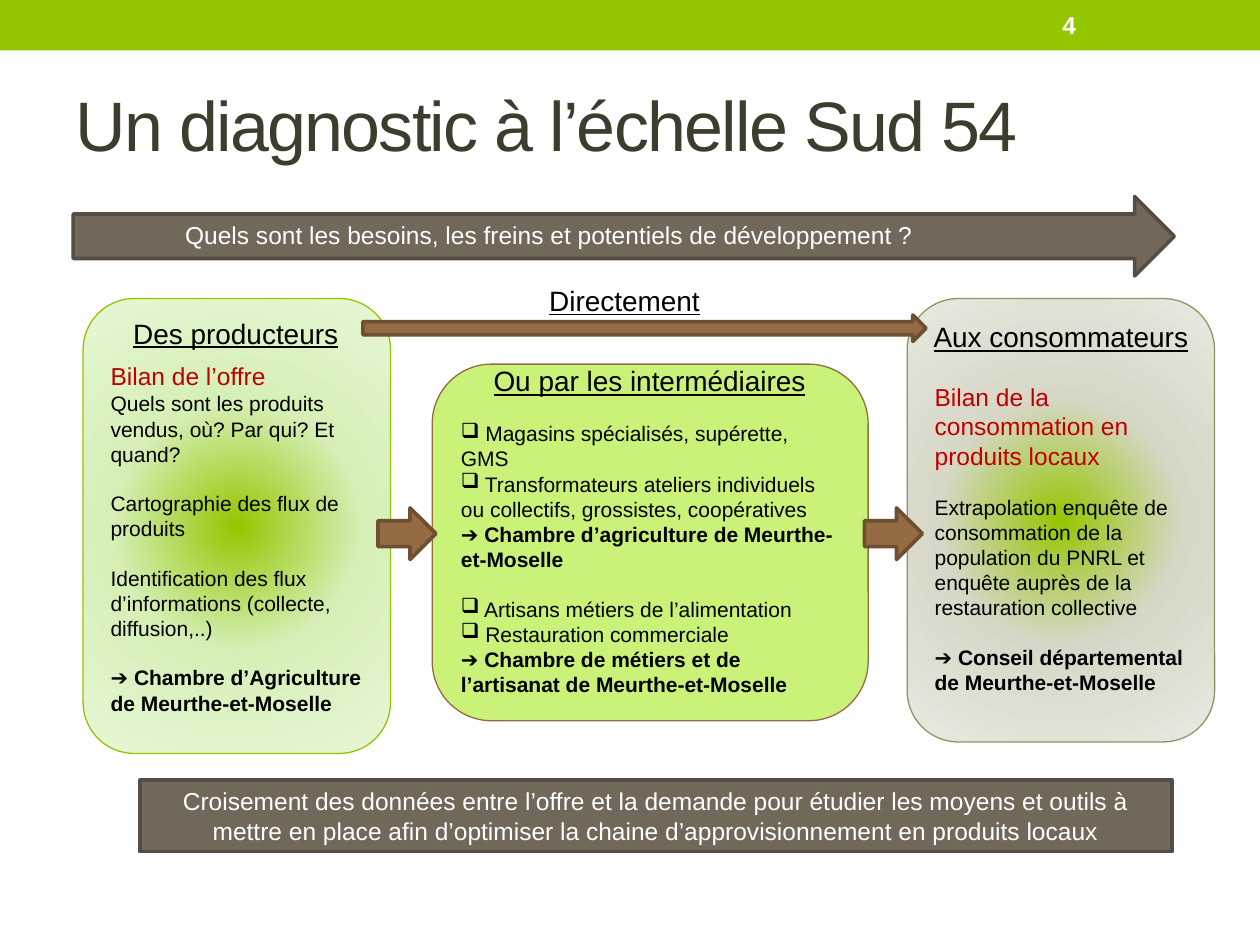
import dataclasses

import pptx
import pptx.dml.color
import pptx.enum.shapes
import pptx.enum.text
import pptx.oxml
import pptx.oxml.ns
import pptx.util

Pt = pptx.util.Pt
KIND = pptx.enum.shapes.MSO_SHAPE
ALIGN = pptx.enum.text.PP_ALIGN
ANCHOR = pptx.enum.text.MSO_ANCHOR


@dataclasses.dataclass(frozen=True)
class Theme:
    """Colours, type sizes and font of the slide."""
    font: str = "Arial"
    green: str = "94C600"
    lime: str = "CAF278"
    olive: str = "909465"
    brown: str = "956B43"
    bark: str = "6E4F32"
    stone: str = "71685A"
    slate: str = "544D43"
    red: str = "C00000"
    ink: str = "3E3D2D"
    black: str = "000000"
    white: str = "FFFFFF"
    fresh: tuple = ("94C600", "D5EFB6", "E8F7D7")
    sage: tuple = ("94C600", "D6D7C6", "E8E9E0")
    title: int = 40
    head: int = 16
    lead: int = 14
    body: int = 12
    gap: float = 13.8
    edge: float = 0.75
    thick: float = 2.08


T = Theme()


def rgb(code):
    """Return the colour for a hex code."""
    return pptx.dml.color.RGBColor.from_string(code)


def style(para, size, color, bold=False, under=False):
    """Format every run of a paragraph."""
    for run in para.runs:
        font = run.font
        font.name, font.size = T.font, Pt(size)
        font.bold, font.underline = bold, under
        font.color.rgb = rgb(color)


def glow(shape, stops):
    """Fill a shape with a round gradient, from the centre outwards."""
    marks = "".join(
        f'<a:gs pos="{pos}"><a:srgbClr val="{code}"/></a:gs>'
        for pos, code in zip((0, 45000, 100000), stops))
    shape.fill.gradient()
    props = shape._element.spPr
    old = props.find(pptx.oxml.ns.qn("a:gradFill"))
    props.replace(old, pptx.oxml.parse_xml(
        f'<a:gradFill {pptx.oxml.ns.nsdecls("a")} rotWithShape="1">'
        f'<a:gsLst>{marks}</a:gsLst><a:path path="circle">'
        '<a:fillToRect l="50000" t="50000" r="50000" b="50000"/>'
        '</a:path></a:gradFill>'))


def block(slide, kind, box, fill, line=None, width=T.thick):
    """Add a preset shape with a plain or glowing fill."""
    shape = slide.shapes.add_shape(kind, *map(Pt, box))
    shape.shadow.inherit = False
    if isinstance(fill, tuple):
        glow(shape, fill)
    else:
        shape.fill.solid()
        shape.fill.fore_color.rgb = rgb(fill)
    if line:
        shape.line.color.rgb = rgb(line)
        shape.line.width = Pt(width)
    else:
        shape.line.fill.background()
    return shape


def label(slide, box, text, size, color, align=ALIGN.LEFT, **look):
    """Add a text box of one paragraph."""
    frame = slide.shapes.add_textbox(*map(Pt, box)).text_frame
    frame.word_wrap = True
    frame.text = text
    frame.paragraphs[0].alignment = align
    style(frame.paragraphs[0], size, color, **look)
    return frame


def notes(slide, box, rows):
    """Add body text from rows of role, text and whether a gap comes first."""
    frame = slide.shapes.add_textbox(*map(Pt, box)).text_frame
    frame.word_wrap = True
    for i, (role, text, gap) in enumerate(rows):
        para = frame.paragraphs[0] if i == 0 else frame.add_paragraph()
        para.text = text
        lead = role == "lead"
        style(para, T.lead if lead else T.body, T.red if lead else T.black,
              bold=role == "bold")
        if gap:
            para.space_before = Pt(T.gap)
        if role == "item":
            para._p.get_or_add_pPr().append(pptx.oxml.parse_xml(
                f'<a:buChar {pptx.oxml.ns.nsdecls("a")} char="❑"/>'))


def card(slide, box, fill, line, name, head, rows, body, align=ALIGN.LEFT):
    """Add a rounded card; head and body are left, top and width within it."""
    x, y, _, high = box
    block(slide, KIND.ROUNDED_RECTANGLE, box, fill, line, T.edge)
    label(slide, (x + head[0], y + head[1], head[2], 26.6), name,
          T.head, T.black, align, under=True)
    notes(slide, (x + body[0], y + body[1], body[2], high - body[1]), rows)


def top(slide, box):
    """Add the green strip with the page number."""
    x, y, wide, high = box
    block(slide, KIND.RECTANGLE, box, T.green)
    frame = label(slide, (x + wide - 120, y + 1.4, 84, high - 2.9), "4",
                  T.lead, T.white, bold=True)
    frame.vertical_anchor = ANCHOR.MIDDLE


def title(slide, box, text):
    """Place and format the title."""
    shape = slide.shapes.title
    shape.left, shape.top, shape.width, shape.height = map(Pt, box)
    frame = shape.text_frame
    frame.text = text
    frame.auto_size = pptx.enum.text.MSO_AUTO_SIZE.NONE
    frame.vertical_anchor = ANCHOR.MIDDLE
    para = frame.paragraphs[0]
    para.alignment = ALIGN.LEFT
    style(para, T.title, T.ink)
    for run in para.runs:
        run.font._element.set("spc", "-100")


def banner(slide, box, text):
    """Add the wide arrow with its question."""
    x, y, wide, _ = box
    shape = block(slide, KIND.RIGHT_ARROW, box, T.stone, T.slate)
    shape.adjustments[0] = 0.56
    label(slide, (x + 56.9, y + 10.1, wide - 60, 24.5), text,
          T.lead, T.white)


def flow(slide, box):
    """Add the direct arrow with its label, and the two short arrows."""
    x, y, wide, _ = box
    label(slide, (x + 99.4, y, 113, 26.6), "Directement",
          T.head, T.black, under=True)
    arrows = [(x, y + 21.6, wide, 15.1)]
    arrows += [(x + dx, y + 131.8, 33.1, 29.5) for dx in (8.6, 286.6)]
    for spot in arrows:
        block(slide, KIND.RIGHT_ARROW, spot, T.brown, T.bark)


def foot(slide, box, text):
    """Add the closing statement."""
    frame = block(slide, KIND.RECTANGLE, box, T.stone, T.slate).text_frame
    frame.word_wrap = True
    frame.text = text
    frame.paragraphs[0].alignment = ALIGN.CENTER
    style(frame.paragraphs[0], T.lead, T.white)


OFFER = [
    ("lead", "Bilan de l’offre", False),
    ("text", "Quels sont les produits vendus, où? Par qui? Et quand?", False),
    ("text", "Cartographie des flux de produits", True),
    ("text", "Identification des flux d’informations (collecte, diffusion,..)", True),
    ("bold", "➔ Chambre d’Agriculture de Meurthe-et-Moselle", True),
]
TRADE = [
    ("item", " Magasins spécialisés, supérette, GMS", False),
    ("item", " Transformateurs ateliers individuels ou collectifs, grossistes, coopératives", False),
    ("bold", "➔ Chambre d’agriculture de Meurthe-et-Moselle", False),
    ("item", " Artisans métiers de l’alimentation", True),
    ("item", " Restauration commerciale", False),
    ("bold", "➔ Chambre de métiers et de l’artisanat de Meurthe-et-Moselle", False),
]
DEMAND = [
    ("lead", "Bilan de la consommation en produits locaux", False),
    ("text", "Extrapolation enquête de consommation de la population du PNRL et enquête auprès de la restauration collective", True),
    ("bold", "➔ Conseil départemental de Meurthe-et-Moselle", True),
]


def main():
    """Build the slide and save it."""
    deck = pptx.Presentation()
    deck.slide_width, deck.slide_height = Pt(720), Pt(540)
    slide = deck.slides.add_slide(deck.slide_layouts[5])
    top(slide, (0, 0, 720, 28.8))
    title(slide, (36, 31.7, 648, 77.8), "Un diagnostic à l’échelle Sud 54")
    banner(slide, (41.8, 112.3, 629.3, 45.4),
           "Quels sont les besoins, les freins et potentiels de développement ?")
    card(slide, (47.5, 170.6, 175.7, 260), T.fresh, T.green, "Des producteurs",
         (8, 6.5, 158.4), OFFER, (8.6, 32.4, 167), ALIGN.CENTER)
    card(slide, (247, 208.1, 249.1, 203.8), T.lime, T.brown,
         "Ou par les intermédiaires", (28, -3.6, 211.7), TRADE, (9.3, 28.8, 230.4))
    card(slide, (518.4, 170.6, 175.7, 253.4), T.sage, T.olive,
         "Aux consommateurs", (8, 8.6, 167), DEMAND, (8.6, 44, 166.3))
    flow(slide, (207.4, 158.4, 321.8, 161.3))
    foot(slide, (79.9, 445.7, 589.7, 41),
         "Croisement des données entre l’offre et la demande pour étudier les "
         "moyens et outils à mettre en place afin d’optimiser la chaine "
         "d’approvisionnement en produits locaux")
    deck.save("out.pptx")


if __name__ == "__main__":
    main()
